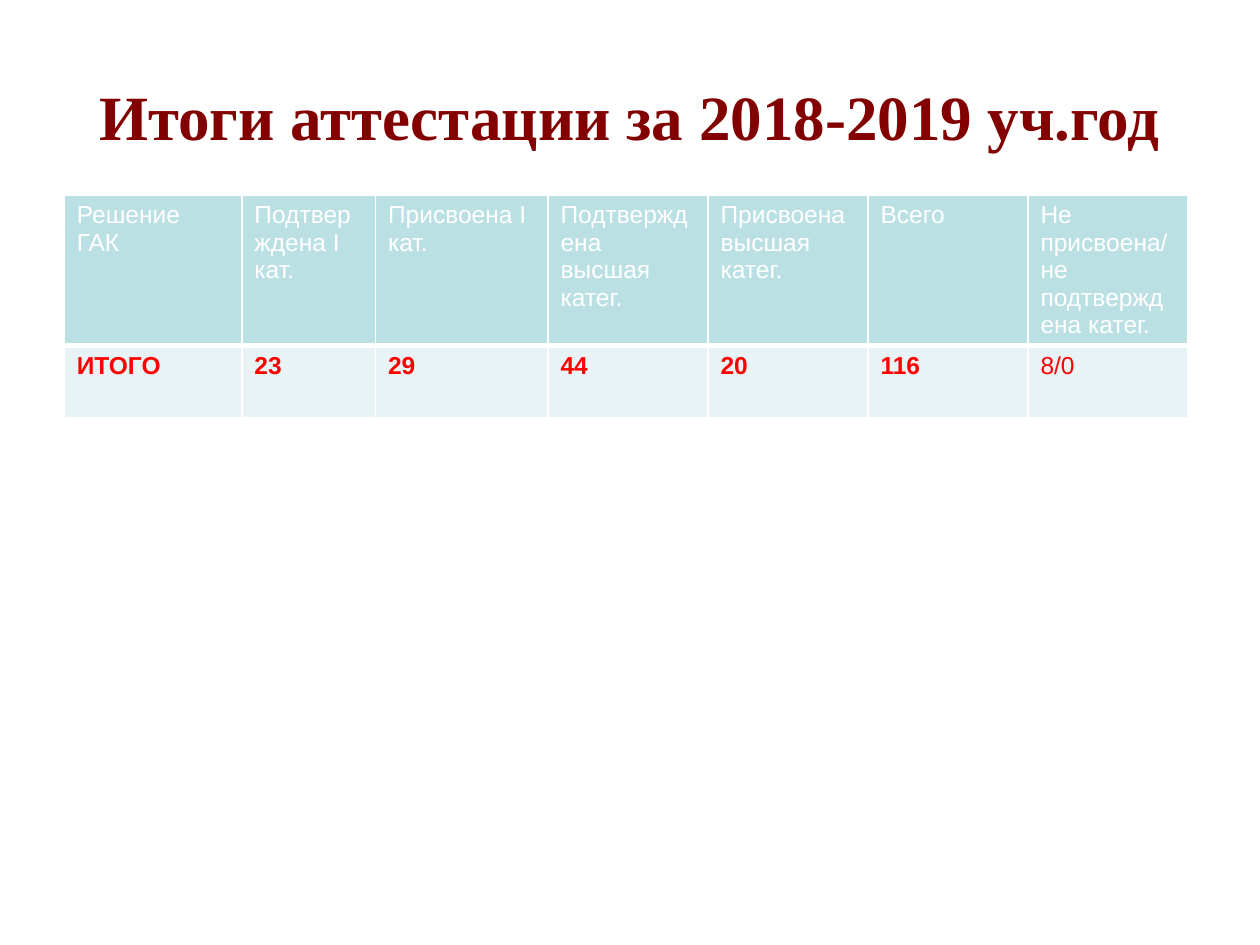
"""Build the slide with the 2018-2019 attestation results."""
from lxml import etree
from pptx import Presentation
from pptx import util as u
from pptx.dml.color import RGBColor
from pptx.enum import text
from pptx.oxml.ns import qn

MAROON = RGBColor(0x82, 0x00, 0x00)
RED = RGBColor(0xFF, 0x00, 0x00)
WHITE = RGBColor(0xFF, 0xFF, 0xFF)
TEAL = RGBColor(0xBB, 0xE0, 0xE3)
PALE_TEAL = RGBColor(0xE7, 0xF3, 0xF4)

COLUMN_WIDTHS = [1.41, 1.06, 1.37] + [1.27] * 4
ROW_HEIGHTS = [1.19, 0.57]
HEADINGS = [
    "Решение ГАК", "Подтверждена I кат.", "Присвоена I кат.",
    "Подтверждена высшая катег.", "Присвоена высшая катег.", "Всего",
    "Не присвоена/не подтверждена катег.",
]
TOTALS = ["ИТОГО", "23", "29", "44", "20", "116", "8/0"]


def style_font(font, name, size, color, bold):
    """Set the typeface, size, colour and weight of a font."""
    font.name = name
    font.size = u.Pt(size)
    font.color.rgb = color
    font.bold = bold


def set_title(page, words):
    """Place and format the title placeholder."""
    title = page.shapes.title
    title.left, title.top = u.Inches(0.43), u.Inches(0.6)
    title.width, title.height = u.Inches(9.13), u.Inches(0.63)
    frame = title.text_frame
    frame.text = words
    frame.auto_size = text.MSO_AUTO_SIZE.NONE
    frame.vertical_anchor = text.MSO_ANCHOR.MIDDLE
    para = frame.paragraphs[0]
    para.alignment = text.PP_ALIGN.CENTER
    style_font(para.font, "Times New Roman", 36, MAROON, True)


def set_borders(cell, bottom):
    """Draw white cell borders, with the bottom width given in points."""
    properties = cell._tc.get_or_add_tcPr()
    for side, width in (("L", 1), ("R", 1), ("T", 1), ("B", bottom)):
        line = etree.SubElement(properties, qn(f"a:ln{side}"), w=str(u.Pt(width)))
        fill = etree.SubElement(line, qn("a:solidFill"))
        etree.SubElement(fill, qn("a:srgbClr"), val=str(WHITE))


def fill_cell(cell, words, fill, color, bold, bottom):
    """Write and format one table cell."""
    cell.text = words
    style_font(cell.text_frame.paragraphs[0].font, "Arial", 14, color, bold)
    set_borders(cell, bottom)
    cell.fill.solid()
    cell.fill.fore_color.rgb = fill


def add_results(page):
    """Add the table of results."""
    table = page.shapes.add_table(
        len(ROW_HEIGHTS), len(COLUMN_WIDTHS), u.Inches(0.51), u.Inches(1.55),
        u.Inches(sum(COLUMN_WIDTHS)), u.Inches(sum(ROW_HEIGHTS))).table
    for column, width in zip(table.columns, COLUMN_WIDTHS):
        column.width = u.Inches(width)
    for row, height in zip(table.rows, ROW_HEIGHTS):
        row.height = u.Inches(height)
    last = len(TOTALS) - 1
    for index, (heading, total) in enumerate(zip(HEADINGS, TOTALS)):
        fill_cell(table.cell(0, index), heading, TEAL, WHITE, False, 3)
        fill_cell(table.cell(1, index), total, PALE_TEAL, RED, index < last, 1)


def main():
    """Build and save the deck."""
    deck = Presentation()
    deck.slide_width, deck.slide_height = u.Inches(10), u.Inches(7.5)
    page = deck.slides.add_slide(deck.slide_layouts.get_by_name("Title Only"))
    set_title(page, "Итоги аттестации за 2018-2019 уч.год")
    add_results(page)
    deck.save("out.pptx")


if __name__ == "__main__":
    main()
